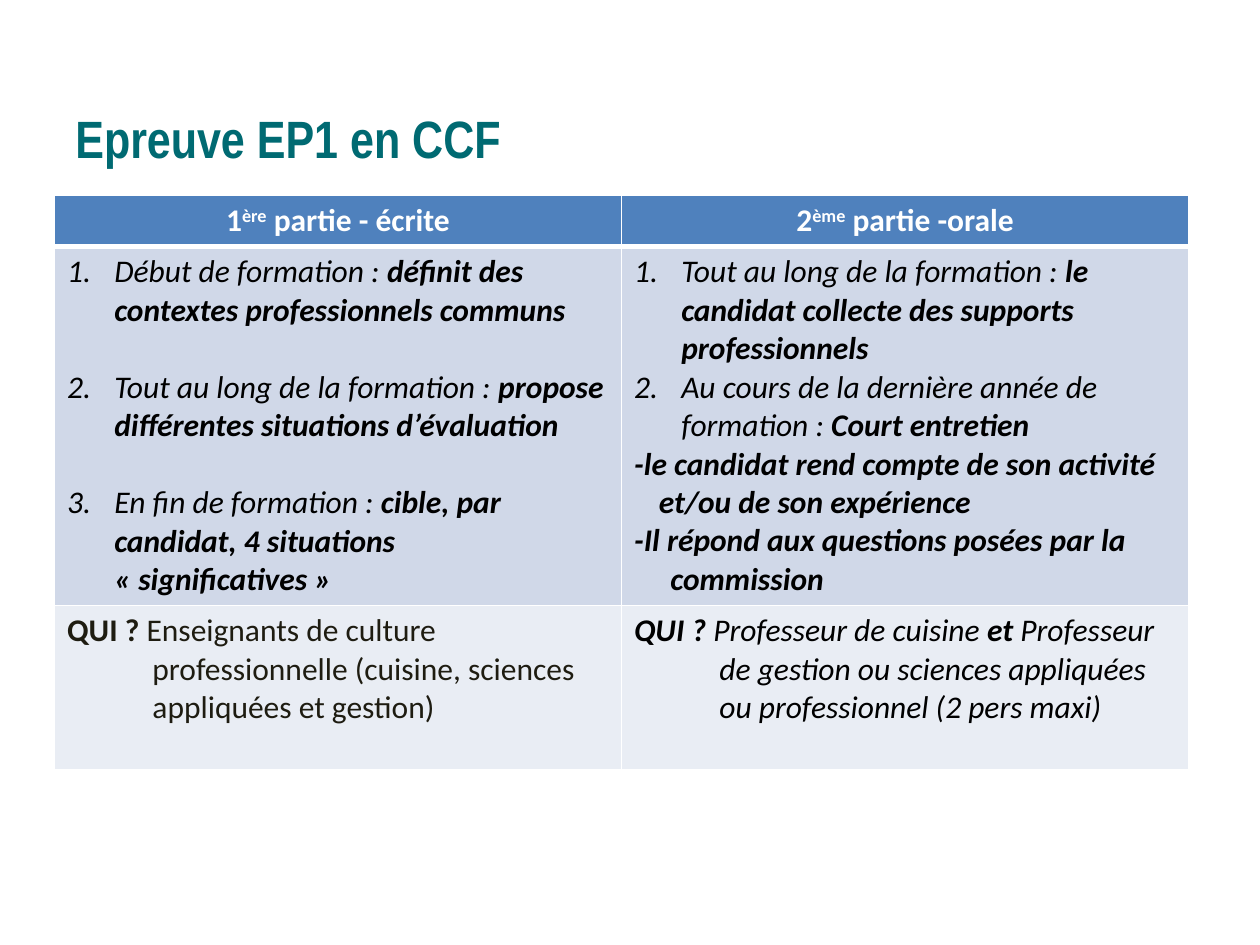
from lxml import etree
from pptx import Presentation
from pptx import util as u
from pptx.dml.color import RGBColor
from pptx.enum import text as t
from pptx.oxml.ns import qn

BLACK, WHITE, TEAL, DARK = "000000", "FFFFFF", "006A72", "1E1C11"
HEAD, BAND, PALE = "4F81BD", "D0D8E8", "E9EDF4"


def color(code):
    return RGBColor.from_string(code)


class Deck:
    """Style and current slide."""
    font, size = "Calibri", 18

    def __init__(self, width, height):
        self.prs = Presentation()
        self.prs.slide_width, self.prs.slide_height = u.Cm(width), u.Cm(height)
        self.slide = self.prs.slides.add_slide(self.prs.slide_layouts[6])

    def title(self, words, left, top, width, height):
        box = self.slide.shapes.add_textbox(*map(u.Cm, (left, top, width, height)))
        frame = box.text_frame
        frame.word_wrap = True
        frame.vertical_anchor = t.MSO_ANCHOR.MIDDLE
        # The bottom margin lifts the line above the table
        frame.margin_top, frame.margin_bottom = 0, u.Pt(33)
        frame.text = words
        para = frame.paragraphs[0]
        para.line_spacing = u.Pt(33)
        self.style(para.runs[0], "b", TEAL, "Arial Narrow", 30)

    def style(self, run, marks, tint, font=None, size=None):
        """Marks: b bold, i italic, ^ superscript."""
        face = run.font
        face.name, face.size = font or self.font, u.Pt(size or self.size)
        face.bold, face.italic = "b" in marks, "i" in marks
        face.color.rgb = color(tint)
        if "^" in marks:
            run._r.get_or_add_rPr().set("baseline", "30000")

    def table(self, left, top, cols, rows):
        frame = self.slide.shapes.add_table(
            len(rows), len(cols), *map(u.Cm, (left, top, sum(cols), sum(rows))))
        grid = frame.table
        for col, width in zip(grid.columns, cols):
            col.width = u.Cm(width)
        for row, height in zip(grid.rows, rows):
            row.height = u.Cm(height)
        return grid

    def cell(self, cell, fill, base=1):
        """Fill a cell and rule its edges; base is the lower line width."""
        props = cell._tc.get_or_add_tcPr()
        for side, width in zip("LRTB", (1, 1, 1, base)):
            line = etree.SubElement(props, qn(f"a:ln{side}"), w=str(u.Pt(width)))
            paint = etree.SubElement(line, qn("a:solidFill"))
            etree.SubElement(paint, qn("a:srgbClr"), val=WHITE)
        cell.fill.solid()
        cell.fill.fore_color.rgb = color(fill)

    def paras(self, cell, items, tint, align=None, gap=0):
        """Each item is (hanging indent, numbered, runs)."""
        frame = cell.text_frame
        for n, (hang, number, runs) in enumerate(items):
            para = frame.add_paragraph() if n else frame.paragraphs[0]
            props = para._p.get_or_add_pPr()
            props.set("marL", str(u.Cm(hang)))
            props.set("indent", str(-u.Cm(hang)))
            if n and gap:
                para.space_before = u.Pt(gap)
            if number:
                etree.SubElement(props, qn("a:buFont"), typeface="+mj-lt")
                etree.SubElement(props, qn("a:buAutoNum"), type="arabicPeriod")
            if align:
                para.alignment = align
            for words, marks in runs:
                run = para.add_run()
                run.text = words
                self.style(run, marks, tint)


def step(lead, rest):
    return 0.95, True, [(lead + " : ", "i"), (rest, "bi")]


def main():
    deck = Deck(25.4, 19.05)
    grid = deck.table(1.1, 3.94, [11.43] * 2, [1.03, 7.23, 3.32])

    # Header row
    heads = [("1", "ère", " partie - écrite"), ("2", "ème", " partie -orale")]
    for col, words in enumerate(heads):
        cell = grid.cell(0, col)
        deck.cell(cell, HEAD, base=3)
        cell.vertical_anchor = t.MSO_ANCHOR.MIDDLE
        deck.paras(cell, [(0, False, list(zip(words, ("b", "b^", "b"))))],
                   WHITE, t.PP_ALIGN.CENTER)

    # Steps of each part
    written = [
        step("Début de formation", "définit des contextes professionnels communs"),
        step("Tout au long de la formation",
             "propose différentes situations d’évaluation"),
        step("En fin de formation",
             "cible, par candidat, 4 situations «\u00a0significatives\u00a0»"),
    ]
    oral = [
        step("Tout au long de la formation",
             "le candidat collecte des supports professionnels"),
        step("Au cours de la dernière année de formation", "Court entretien"),
        (0.5, False, [("-le candidat rend compte de son activité "
                       "et/ou de son expérience", "bi")]),
        (0.73, False, [("-Il répond aux questions posées par la commission", "bi")]),
    ]
    for col, (items, gap) in enumerate([(written, 22), (oral, 0)]):
        deck.cell(grid.cell(1, col), BAND)
        deck.paras(grid.cell(1, col), items, BLACK, gap=gap)

    # Who takes part
    staff = [("QUI ? ", "b"), ("Enseignants de culture professionnelle "
                               "(cuisine, sciences appliquées et gestion)", "")]
    jury = [("QUI ? ", "bi"), ("Professeur de cuisine ", "i"), ("et ", "bi"),
            ("Professeur de gestion ou sciences appliquées "
             "ou professionnel (2 pers maxi)", "i")]
    for col, (runs, tint) in enumerate([(staff, DARK), (jury, BLACK)]):
        deck.cell(grid.cell(2, col), PALE)
        deck.paras(grid.cell(2, col), [(1.72, False, runs)], tint)

    # Title
    deck.title("Epreuve EP1 en CCF", 1.27, 1.9, 22.86, 3.02)

    deck.prs.save("out.pptx")


if __name__ == "__main__":
    main()
